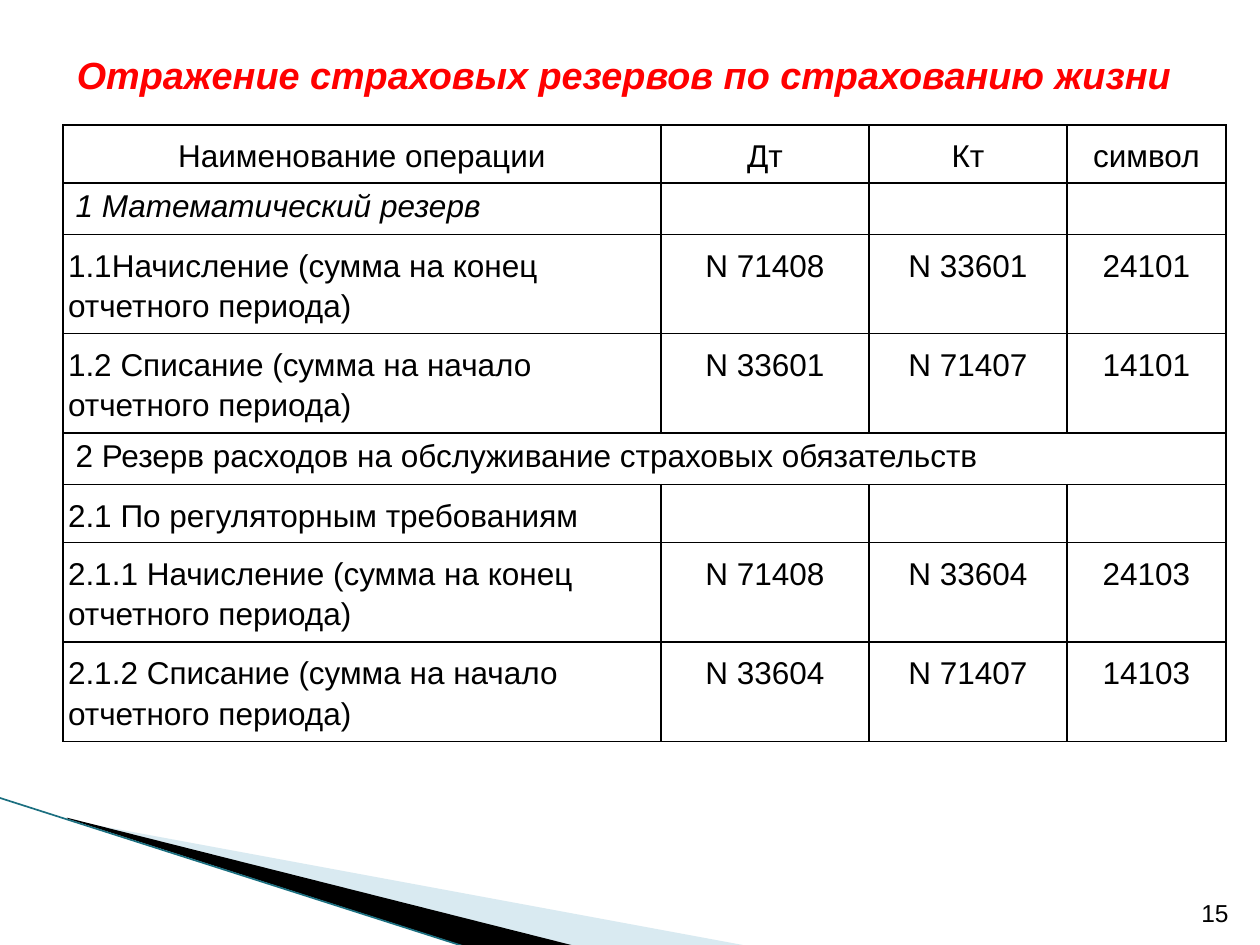
from lxml import etree
from pptx import Presentation, util as u
from pptx.dml.color import RGBColor
from pptx.enum import text
from pptx.oxml import ns

prs = Presentation()
prs.slide_width, prs.slide_height = u.Inches(10), u.Inches(7.5)

BLACK, WHITE, RED = "000000", "FFFFFF", "FF0000"
COLUMNS = [4.74, 1.65, 1.57, 1.26]
ROWS = [
    (0.46, ["Наименование операции", "Дт", "Кт", "символ"]),
    (0.41, ["1 Математический резерв", "", "", ""]),
    (0.79, ["1.1Начисление (сумма на конец отчетного периода)",
            "N 71408", "N 33601", "24101"]),
    (0.79, ["1.2 Списание (сумма на начало отчетного периода)",
            "N 33601", "N 71407", "14101"]),
    (0.41, ["2 Резерв расходов на обслуживание страховых обязательств"]),
    (0.46, ["2.1 По регуляторным требованиям", "", "", ""]),
    (0.79, ["2.1.1 Начисление (сумма на конец отчетного периода)",
            "N 71408", "N 33604", "24103"]),
    (0.79, ["2.1.2 Списание (сумма на начало отчетного периода)",
            "N 33604", "N 71407", "14103"]),
]
HEADER, SECTIONS, ITALIC = 0, (1, 4), 1


def color(hex_value):
    return RGBColor.from_string(hex_value)


def area(left, top, width, height):
    """Box given in percent of the slide's width and height."""
    w, h = prs.slide_width / 100, prs.slide_height / 100
    return round(left * w), round(top * h), round(width * w), round(height * h)


def set_font(p, size, hex_value=BLACK, bold=False, italic=False):
    f = p.font
    f.name, f.size, f.bold, f.italic = "Arial", u.Pt(size), bold, italic
    f.color.rgb = color(hex_value)


def add_corner(s, box):
    """Two wedges and a line; points are in percent of the box."""
    left, top, width, height = box

    def at(x, y):
        return round(left + x * width / 100), round(top + y * height / 100)

    wedges = [
        ("A0CBDC", 40, [(9.17, 15), (99.17, 98.33), (76, 98.33), (9.17, 14.17)]),
        (BLACK, 100, [(8.83, 13.33), (76.17, 98.33), (62, 99.17), (9, 14.17)]),
    ]
    for hex_value, opacity, points in wedges:
        start, *rest = [at(*point) for point in points]
        builder = s.shapes.build_freeform(*start)
        builder.add_line_segments(rest)
        sp = builder.convert_to_shape()
        sp.shadow.inherit = False
        sp.line.fill.background()
        sp.fill.solid()
        sp.fill.fore_color.rgb = color(hex_value)
        if opacity < 100:
            rgb = sp.fill._xPr.find(".//" + ns.qn("a:srgbClr"))
            etree.SubElement(rgb, ns.qn("a:alpha"), val=str(opacity * 1000))

    edge = s.shapes.add_connector(1, *at(-0.17, 0), *at(61.83, 99.17))
    edge.line.color.rgb = color("1B6F80")
    edge.line.width = u.Pt(0.95)
    etree.SubElement(edge._element.spPr, ns.qn("a:effectLst"))


def add_borders(cell):
    tc_pr = cell._tc.get_or_add_tcPr()
    for side in "LRTB":
        ln = etree.SubElement(tc_pr, ns.qn("a:ln" + side), w=str(u.Pt(1)))
        fill = etree.SubElement(ln, ns.qn("a:solidFill"))
        etree.SubElement(fill, ns.qn("a:srgbClr"), val=BLACK)


def fill_cell(cell, value, row, col):
    section = row in SECTIONS
    if value and not section:
        cell.margin_left = cell.margin_right = u.Inches(0.04)
        cell.margin_top = cell.margin_bottom = u.Inches(0.07)
    add_borders(cell)
    cell.fill.solid()
    cell.fill.fore_color.rgb = color(WHITE)
    p = cell.text_frame.paragraphs[0]
    p.text = value
    if not section:
        p.line_spacing = 1.15
    if col or row == HEADER:
        p.alignment = text.PP_ALIGN.CENTER
    set_font(p, 18, italic=row == ITALIC)


def add_operations(s, box):
    table = s.shapes.add_table(len(ROWS), len(COLUMNS), *box).table
    table.first_row = table.horz_banding = False
    for column, share in zip(table.columns, COLUMNS):
        column.width = round(box[2] * share / sum(COLUMNS))
    total = sum(height for height, _ in ROWS)
    for r, (height, values) in enumerate(ROWS):
        table.rows[r].height = round(box[3] * height / total)
        if len(values) == 1:
            table.cell(r, 0).merge(table.cell(r, len(COLUMNS) - 1))
        for c, value in enumerate(values):
            fill_cell(table.cell(r, c), value, r, c)


def add_title(s, box):
    sp = s.shapes.title
    sp.left, sp.top, sp.width, sp.height = box
    tf = sp.text_frame
    tf.vertical_anchor = text.MSO_ANCHOR.MIDDLE
    tf.auto_size = text.MSO_AUTO_SIZE.NONE
    p = tf.paragraphs[0]
    p.text = "Отражение страховых резервов по страхованию жизни"
    p.alignment = text.PP_ALIGN.LEFT
    set_font(p, 21.6, RED, bold=True, italic=True)


def add_page_number(s, box):
    tf = s.shapes.add_textbox(*box).text_frame
    tf.word_wrap = True
    tf.vertical_anchor = text.MSO_ANCHOR.BOTTOM
    p = tf.paragraphs[0]
    p.text = "15"
    p.alignment = text.PP_ALIGN.RIGHT
    set_font(p, 14)


def main():
    s = prs.slides.add_slide(prs.slide_layouts[5])
    add_corner(s, area(0, 84.4, 60, 16))
    add_operations(s, area(5, 13.2, 92.3, 65.2))
    add_page_number(s, area(92.5, 95.2, 6, 3.6))
    add_title(s, area(5.1, 3.7, 92.1, 8.4))
    prs.save("out.pptx")


if __name__ == "__main__":
    main()
